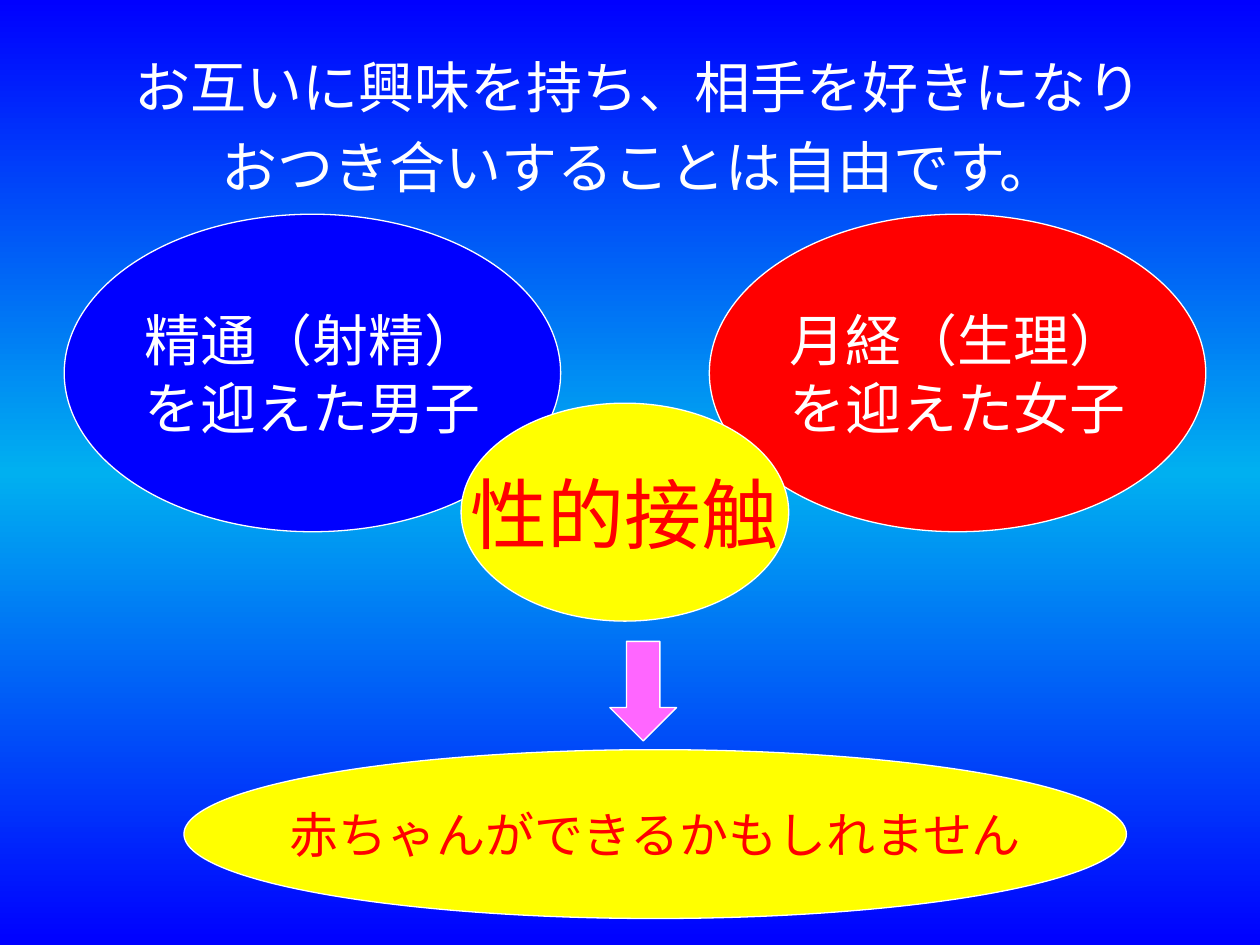
from copy import deepcopy

from lxml import etree
from pptx import Presentation
from pptx import util as u
from pptx.dml.color import RGBColor
from pptx.enum import shapes, text
from pptx.oxml.ns import qn

COLORS = {
    "blue": "0000FF",
    "sky": "00B0F0",
    "red": "FF0000",
    "yellow": "FFFF00",
    "pink": "FF66FF",
    "white": "FFFFFF",
}
BODY_FONT = "Calibri"
OVAL_FONT = "Noto Sans CJK JP"
LINE_HEIGHT = 1.22


def rgb(name):
    return RGBColor.from_string(COLORS[name])


def paint_background(slide):
    fill = slide.background.fill
    fill.gradient()
    fill.gradient_angle = 90
    first_stop = fill.gradient_stops[0]._gs
    first_stop.addnext(deepcopy(first_stop))
    for stop, position, color in zip(
        fill.gradient_stops, (0, 0.5, 1), ("blue", "sky", "blue")
    ):
        stop.position = position
        stop.color.rgb = rgb(color)


def write_lines(frame, lines, size, color, font, space=0):
    frame.text = "\n".join(lines)
    for index, paragraph in enumerate(frame.paragraphs):
        paragraph.alignment = text.PP_ALIGN.CENTER
        paragraph.line_spacing = u.Pt(round(size * LINE_HEIGHT))
        if index:
            paragraph.space_before = u.Pt(space)
        for run in paragraph.runs:
            run.font.size = u.Pt(size)
            run.font.name = font
            run.font.color.rgb = rgb(color)
            east_asian = etree.SubElement(run.font._element, qn("a:ea"))
            east_asian.set("typeface", font)


def add_figure(slide, preset, box, fill):
    figure = slide.shapes.add_shape(preset, *map(u.Inches, box))
    figure.shadow.inherit = False
    figure.fill.solid()
    figure.fill.fore_color.rgb = rgb(fill)
    figure.line.color.rgb = rgb("white")
    figure.line.width = u.Pt(0.75)
    return figure


def add_oval(slide, box, fill, lines, size, color):
    oval = add_figure(slide, shapes.MSO_SHAPE.OVAL, box, fill)
    frame = oval.text_frame
    frame.word_wrap = False
    frame.vertical_anchor = text.MSO_ANCHOR.MIDDLE
    write_lines(frame, lines, size, color, OVAL_FONT)


def add_message(slide, box, lines):
    message = slide.shapes.add_textbox(*map(u.Inches, box))
    message.text_frame.word_wrap = True
    write_lines(message.text_frame, lines, 32, "white", BODY_FONT, space=6.4)


def main():
    deck = Presentation()
    deck.slide_width, deck.slide_height = u.Inches(10), u.Inches(7.5)
    slide = deck.slides.add_slide(deck.slide_layouts[6])
    paint_background(slide)

    add_message(
        slide,
        (0.57, 0.36, 9, 1.26),
        ["お互いに興味を持ち、相手を好きになり", "おつき合いすることは自由です。"],
    )
    for left, fill, lines in (
        (0.51, "blue", ["精通（射精）", "を迎えた男子"]),
        (5.63, "red", ["月経（生理）", "を迎えた女子"]),
    ):
        add_oval(slide, (left, 1.7, 3.94, 2.52), fill, lines, 32, "white")
    add_oval(slide, (3.66, 3.2, 2.6, 1.73), "yellow", ["性的接触"], 44, "red")
    add_figure(slide, shapes.MSO_SHAPE.DOWN_ARROW, (4.84, 5.09, 0.53, 0.79), "pink")
    add_oval(
        slide,
        (1.46, 5.95, 7.48, 1.34),
        "yellow",
        ["赤ちゃんができるかもしれません"],
        28,
        "red",
    )
    deck.save("out.pptx")


if __name__ == "__main__":
    main()
